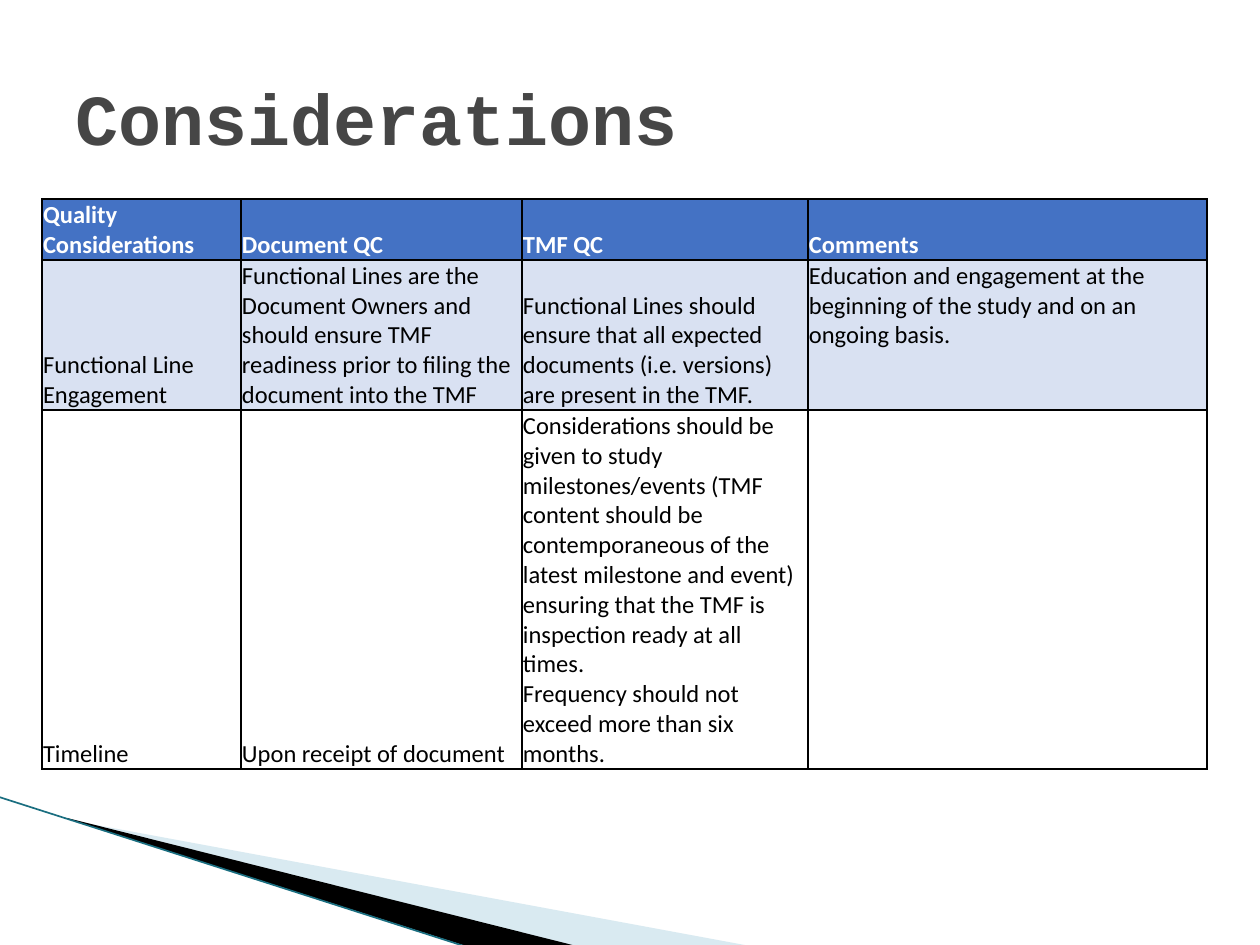
from lxml import etree
from pptx import Presentation
from pptx import util as u
from pptx.dml.color import RGBColor
from pptx.enum import shapes, text
from pptx.oxml import ns

SCALE = 914400 / 126
COLORS = {
    "title": "464646",
    "header": "4472C4",
    "band": "D9E1F2",
    "pale": "A0CBDC",
    "teal": "1A6E80",
    "black": "000000",
    "white": "FFFFFF",
}
COLUMNS = (199, 281, 286, 399)
ROWS = (
    (61, "header", (
        "Quality Considerations", "Document QC", "TMF QC", "Comments")),
    (150, "band", (
        "Functional Line Engagement",
        "Functional Lines are the Document Owners and should ensure TMF "
        "readiness prior to filing the document into the TMF",
        "Functional Lines should ensure that all expected documents "
        "(i.e. versions) are present in the TMF.",
        "Education and engagement at the beginning of the study and on an "
        "ongoing basis.")),
    (359, None, (
        "Timeline",
        "Upon receipt of document",
        "Considerations should be given to study milestones/events (TMF "
        "content should be contemporaneous of the latest milestone and event) "
        "ensuring that the TMF is inspection ready at all times.\n"
        "Frequency should not exceed more than six months.",
        "")),
)


def px(value):
    return u.Emu(round(value * SCALE))


def color(name):
    return RGBColor.from_string(COLORS[name])


def write_text(frame, content, font="Calibri", size=14, fill="black", bold=False):
    frame.word_wrap = True
    frame.text = content
    for paragraph in frame.paragraphs:
        paragraph.font.name = font
        paragraph.font.size = u.Pt(size)
        paragraph.font.bold = bold
        paragraph.font.color.rgb = color(fill)


def add_wedge(slide, points, fill, opacity=100):
    builder = slide.shapes.build_freeform(*points[0], scale=SCALE)
    builder.add_line_segments(points[1:], close=True)
    shape = builder.convert_to_shape()
    shape.shadow.inherit = False
    shape.line.fill.background()
    shape.fill.solid()
    shape.fill.fore_color.rgb = color(fill)
    if opacity < 100:
        tone = shape.fill._xPr.find(".//" + ns.qn("a:srgbClr"))
        etree.SubElement(tone, ns.qn("a:alpha"), val=str(opacity * 1000))


def add_line(slide, start, end, stroke, width):
    line = slide.shapes.add_connector(
        shapes.MSO_CONNECTOR.STRAIGHT, *map(px, start + end))
    line.line.color.rgb = color(stroke)
    line.line.width = u.Pt(width)
    etree.SubElement(line._element.spPr, ns.qn("a:effectLst"))


def add_title(slide, content):
    box = slide.shapes.add_textbox(px(63), px(38), px(1134), px(157))
    box.text_frame.vertical_anchor = text.MSO_ANCHOR.MIDDLE
    write_text(box.text_frame, content, font="Courier New", size=41,
               fill="title", bold=True)


def add_borders(cell):
    properties = cell._tc.get_or_add_tcPr()
    for side in ("lnL", "lnR", "lnT", "lnB"):
        border = etree.SubElement(properties, ns.qn("a:" + side), w=str(u.Pt(1)))
        solid = etree.SubElement(border, ns.qn("a:solidFill"))
        etree.SubElement(solid, ns.qn("a:srgbClr"), val=COLORS["black"])


def format_cell(cell, content, fill):
    add_borders(cell)
    cell.margin_left = cell.margin_right = cell.margin_top = px(1)
    cell.margin_bottom = 0
    cell.vertical_anchor = text.MSO_ANCHOR.BOTTOM
    if fill:
        cell.fill.solid()
        cell.fill.fore_color.rgb = color(fill)
    else:
        cell.fill.background()
    is_header = fill == "header"
    write_text(cell.text_frame, content, bold=is_header,
               fill="white" if is_header else "black")


def add_considerations_table(slide):
    height = sum(row[0] for row in ROWS)
    table = slide.shapes.add_table(
        len(ROWS), len(COLUMNS), px(42), px(199), px(sum(COLUMNS)), px(height)).table
    for column, width in zip(table.columns, COLUMNS):
        column.width = px(width)
    for row, (row_height, fill, contents) in zip(table.rows, ROWS):
        row.height = px(row_height)
        for cell, content in zip(row.cells, contents):
            format_cell(cell, content, fill)
    table.cell(1, 3).vertical_anchor = text.MSO_ANCHOR.TOP


def main():
    presentation = Presentation()
    presentation.slide_width = px(1260)
    presentation.slide_height = px(945)
    slide = presentation.slides.add_slide(presentation.slide_layouts[6])
    add_wedge(slide, [(69, 820), (750, 946), (575, 946), (69, 819)], "pale", 40)
    add_wedge(slide, [(67, 818), (576, 946), (469, 947), (68, 819)], "black")
    add_line(slide, (-1, 797), (467, 947), "teal", 0.95)
    add_title(slide, "Considerations")
    add_considerations_table(slide)
    presentation.save("out.pptx")


if __name__ == "__main__":
    main()
